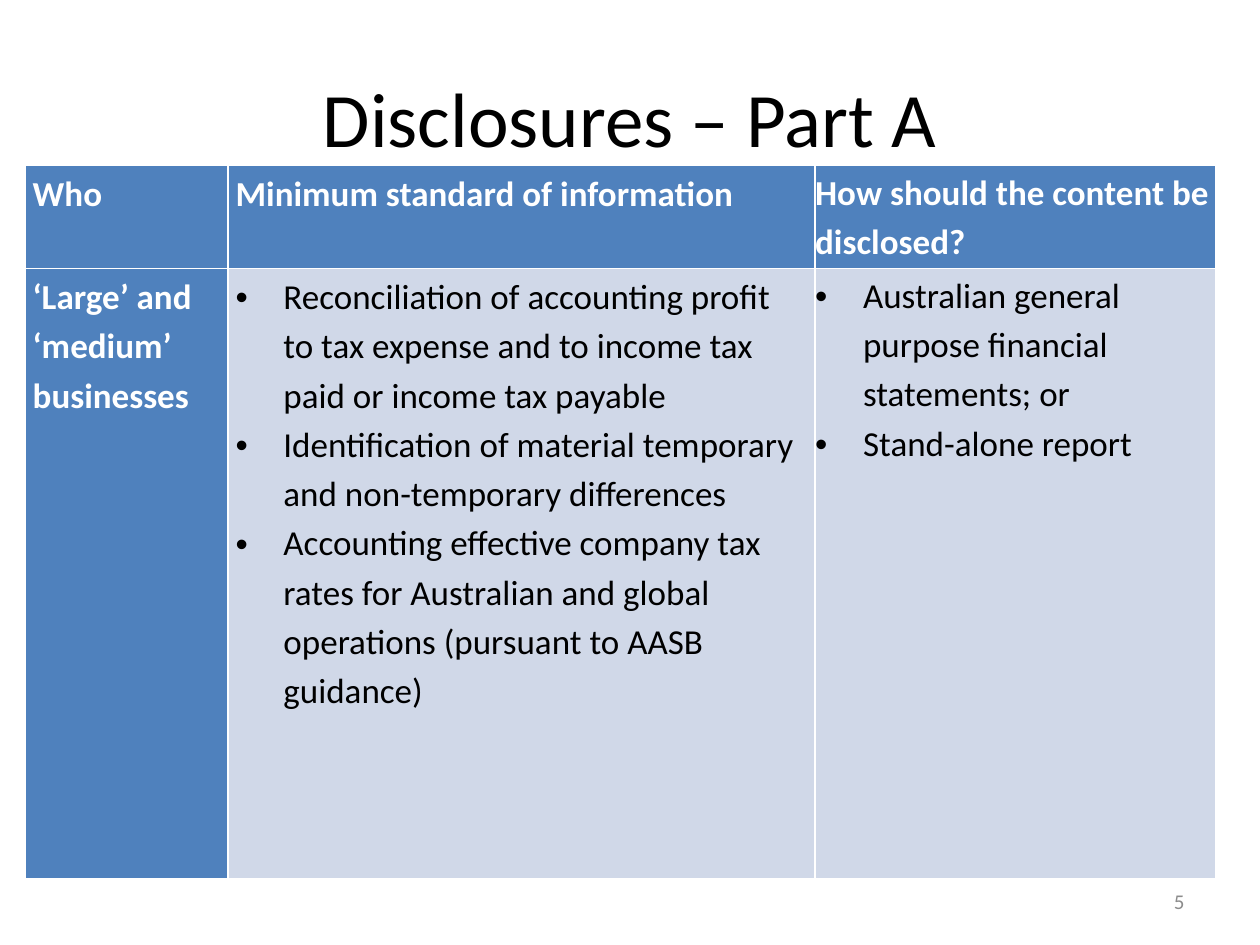
from dataclasses import dataclass

from lxml.etree import SubElement
from pptx import Presentation
from pptx.dml.color import RGBColor
from pptx.enum.text import MSO_ANCHOR, PP_ALIGN
from pptx.oxml.ns import qn
from pptx.util import Inches, Pt

TITLE_ONLY = 5
WIDTH, HEIGHT = Inches(10), Inches(7.5)


@dataclass(frozen=True)
class Theme:
    font: str = "Calibri"
    ink: str = "000000"
    paper: str = "FFFFFF"
    header: str = "4F81BD"
    band: str = "D0D8E8"
    muted: str = "8C8C8C"
    title_size: int = 44
    table_size: int = 20
    number_size: int = 12
    line_spacing: float = 1.15
    hanging: float = 0.38


def apply(target, formats):
    for name, value in formats.items():
        setattr(target, name, value)


def area(left, top, width, height):
    """Turn shares of the slide into named lengths."""
    return {
        "left": round(left * WIDTH),
        "top": round(top * HEIGHT),
        "width": round(width * WIDTH),
        "height": round(height * HEIGHT),
    }


class SlideBuilder:
    def __init__(self, slide, theme):
        self.slide = slide
        self.theme = theme

    def add_lines(self, frame, lines, size, color, bold=False, bullet=False, **paragraph_formats):
        for index, line in enumerate(lines):
            paragraph = frame.add_paragraph() if index else frame.paragraphs[0]
            apply(paragraph, paragraph_formats)
            run = paragraph.add_run()
            run.text = line
            apply(run.font, {"name": self.theme.font, "size": Pt(size), "bold": bold})
            run.font.color.rgb = RGBColor.from_string(color)
            if bullet:
                self.add_bullet(paragraph)

    def add_bullet(self, paragraph):
        properties = paragraph._p.get_or_add_pPr()
        indent = Inches(self.theme.hanging)
        properties.set("marL", str(indent))
        properties.set("indent", str(-indent))
        SubElement(properties, qn("a:buFont"), typeface="Arial")
        SubElement(properties, qn("a:buChar"), char="•")

    def title(self, text, place):
        shape = self.slide.shapes.title
        apply(shape, place)
        shape.text_frame.vertical_anchor = MSO_ANCHOR.MIDDLE
        self.add_lines(shape.text_frame, [text], self.theme.title_size, self.theme.ink,
                       alignment=PP_ALIGN.CENTER)

    def table(self, rows, place, column_widths, row_heights):
        """Build a table with a filled header row and first column."""
        table = self.slide.shapes.add_table(len(rows), len(rows[0]), **place).table
        table.first_col = True
        for column, width in zip(table.columns, column_widths):
            column.width = Inches(width)
        for row, height in zip(table.rows, row_heights):
            row.height = Inches(height)
        for row_index, row in enumerate(rows):
            for column_index, lines in enumerate(row):
                heading = row_index == 0 or column_index == 0
                flush = column_index == len(row) - 1
                self.cell(table.cell(row_index, column_index), lines, heading, flush)

    def cell(self, cell, lines, heading, flush):
        theme = self.theme
        side, top = (0, 0) if flush else (Inches(0.06), Inches(0.01))
        apply(cell, {"margin_left": side, "margin_right": side,
                     "margin_top": top, "margin_bottom": 0})
        cell.fill.solid()
        cell.fill.fore_color.rgb = RGBColor.from_string(theme.header if heading else theme.band)
        self.add_lines(cell.text_frame, lines, theme.table_size,
                       theme.paper if heading else theme.ink,
                       bold=heading, bullet=not heading, line_spacing=theme.line_spacing)

    def page_number(self, number, place):
        frame = self.slide.shapes.add_textbox(**place).text_frame
        apply(frame, {"word_wrap": True, "vertical_anchor": MSO_ANCHOR.MIDDLE})
        self.add_lines(frame, [str(number)], self.theme.number_size, self.theme.muted,
                       alignment=PP_ALIGN.RIGHT)


DISCLOSURES = [
    [
        ["Who"],
        ["Minimum standard of information"],
        ["How should the content be disclosed?"],
    ],
    [
        ["‘Large’ and ‘medium’ businesses"],
        [
            "Reconciliation of accounting profit to tax expense and to income tax paid "
            "or income tax payable",
            "Identification of material temporary and non-temporary differences",
            "Accounting effective company tax rates for Australian and global operations "
            "(pursuant to AASB guidance)",
        ],
        [
            "Australian general purpose financial statements; or",
            "Stand-alone report",
        ],
    ],
]


def main():
    presentation = Presentation()
    apply(presentation, {"slide_width": WIDTH, "slide_height": HEIGHT})
    slide = presentation.slides.add_slide(presentation.slide_layouts[TITLE_ONLY])
    builder = SlideBuilder(slide, Theme())
    builder.title("Disclosures – Part A", area(0.05, 0.04, 0.9, 1 / 6))
    builder.table(DISCLOSURES, area(0.02, 0.175, 0.945, 0.755),
                  column_widths=(1.61, 4.66, 3.18), row_heights=(0.82, 4.84))
    builder.page_number(5, area(0.717, 0.927, 0.233, 0.053))
    presentation.save("out.pptx")


if __name__ == "__main__":
    main()
